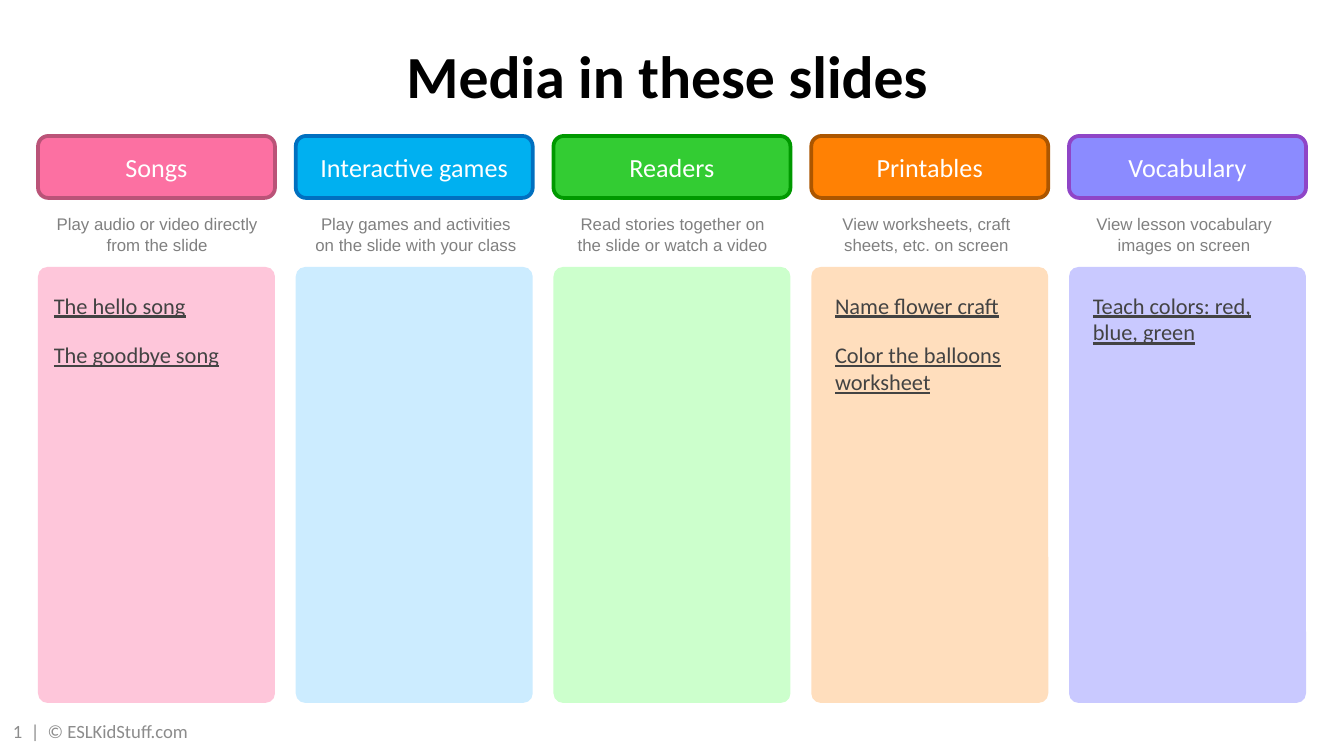
import pptx
import pptx.dml.color
import pptx.enum.shapes
import pptx.enum.text
import pptx.util
from dataclasses import dataclass

TITLE = "Media in these slides"
FOOTER = "1  |  © ESLKidStuff.com"

# heading, caption, items, (header fill, border, panel fill), caption shift, item indent
COLUMNS = [
    ("Songs", "Play audio or video directly from the slide",
     ["The hello song", "The goodbye song"], ("FC70A2", "BA5378", "FEC6DA"), 4, 13),
    ("Interactive games", "Play games and activities on the slide with your class",
     [], ("00B0F0", "0070C0", "CCECFF"), 5, 13),
    ("Readers", "Read stories together on the slide or watch a video",
     [], ("33CC33", "009900", "CCFFCC"), 4, 13),
    ("Printables", "View worksheets, craft sheets, etc. on screen",
     ["Name flower craft", "Color the balloons worksheet"],
     ("FF8104", "AC5600", "FFDEBD"), 0, 21),
    ("Vocabulary", "View lesson vocabulary images on screen",
     ["Teach colors: red, blue, green"], ("8B8BFF", "8F45C7", "C9C9FF"), 0, 21),
]


@dataclass(frozen=True)
class Theme:
    main_font: str = "Calibri"
    caption_font: str = "Arial"
    title: tuple = (32, "000000")
    header: tuple = (14, "FFFFFF")
    item: tuple = (12, "434343")
    caption: tuple = (9, "808080")
    footer: tuple = (10, "8C8C8C")


THEME = Theme()
ANCHOR = pptx.enum.text.MSO_ANCHOR
CENTER = pptx.enum.text.PP_ALIGN.CENTER
LEFT = pptx.enum.text.PP_ALIGN.LEFT

# Layout in px
SLIDE_SIZE = (1344, 756)
TITLE_BOX = (46, 32, 1243, 73)
FOOTER_BOX = (0, 711, 292, 40)
COLUMNS_LEFT, COLUMNS_RIGHT, COLUMN_WIDTH = 38, 1306, 237
COLUMN_PITCH = (COLUMNS_RIGHT - COLUMNS_LEFT - COLUMN_WIDTH) / (len(COLUMNS) - 1)
HEADER_TOP, HEADER_HEIGHT = 136, 62
CAPTION_TOP, CAPTION_WIDTH, CAPTION_HEIGHT = 207, 230, 54
PANEL_TOP, PANEL_HEIGHT = 267, 436


def px(value):
    return pptx.util.Emu(round(value * 914400 / 134.4))


def color(value):
    return pptx.dml.color.RGBColor.from_string(value)


def write(shape, lines, style, font=THEME.main_font, align=CENTER, anchor=ANCHOR.TOP,
          insets=(13, 7), space_after=0, **font_options):
    frame = shape.text_frame
    frame.word_wrap = True
    frame.auto_size = pptx.enum.text.MSO_AUTO_SIZE.NONE
    frame.vertical_anchor = anchor
    frame.margin_left, frame.margin_top = map(px, insets)
    frame.margin_right, frame.margin_bottom = px(13), px(7)
    frame.text = "\n".join(lines)
    for paragraph in frame.paragraphs:
        paragraph.alignment = align
        paragraph.space_after = pptx.util.Pt(space_after)
        paragraph.font.name = font
        paragraph.font.size = pptx.util.Pt(style[0])
        paragraph.font.color.rgb = color(style[1])
        for option, value in font_options.items():
            setattr(paragraph.font, option, value)


def add_text(slide, box, lines, style, **options):
    shape = slide.shapes.add_textbox(*map(px, box))
    write(shape, lines, style, **options)


def add_round_box(slide, box, fill, border=None):
    shape = slide.shapes.add_shape(
        pptx.enum.shapes.MSO_SHAPE.ROUNDED_RECTANGLE, *map(px, box))
    shape.shadow.inherit = False
    shape.fill.solid()
    shape.fill.fore_color.rgb = color(fill)
    if border:
        shape.line.color.rgb = color(border)
        shape.line.width = pptx.util.Pt(2)
    else:
        shape.line.fill.background()
    return shape


def add_column(slide, index, heading, caption, items, colors, caption_shift, indent):
    left = COLUMNS_LEFT + index * COLUMN_PITCH
    header_fill, border, panel_fill = colors

    # Header button
    header = add_round_box(slide, (left, HEADER_TOP, COLUMN_WIDTH, HEADER_HEIGHT),
                           header_fill, border)
    write(header, [heading], THEME.header, anchor=ANCHOR.MIDDLE)

    # Caption
    add_text(slide, (left + caption_shift, CAPTION_TOP, CAPTION_WIDTH, CAPTION_HEIGHT),
             [caption], THEME.caption, font=THEME.caption_font)

    # Panel with its list of media
    panel = add_round_box(slide, (left, PANEL_TOP, COLUMN_WIDTH, PANEL_HEIGHT), panel_fill)
    panel.adjustments[0] = 0.04
    if items:
        write(panel, items, THEME.item, align=LEFT, insets=(indent, 22),
              space_after=12, underline=True)


def main():
    presentation = pptx.Presentation()
    presentation.slide_width, presentation.slide_height = map(px, SLIDE_SIZE)
    slide = presentation.slides.add_slide(presentation.slide_layouts[5])

    # Title
    title = slide.shapes.title
    title.left, title.top, title.width, title.height = map(px, TITLE_BOX)
    write(title, [TITLE], THEME.title, bold=True)

    # Columns
    for index, column in enumerate(COLUMNS):
        add_column(slide, index, *column)

    # Footer
    add_text(slide, FOOTER_BOX, [FOOTER], THEME.footer, align=LEFT, anchor=ANCHOR.MIDDLE)

    presentation.save("out.pptx")


if __name__ == "__main__":
    main()
